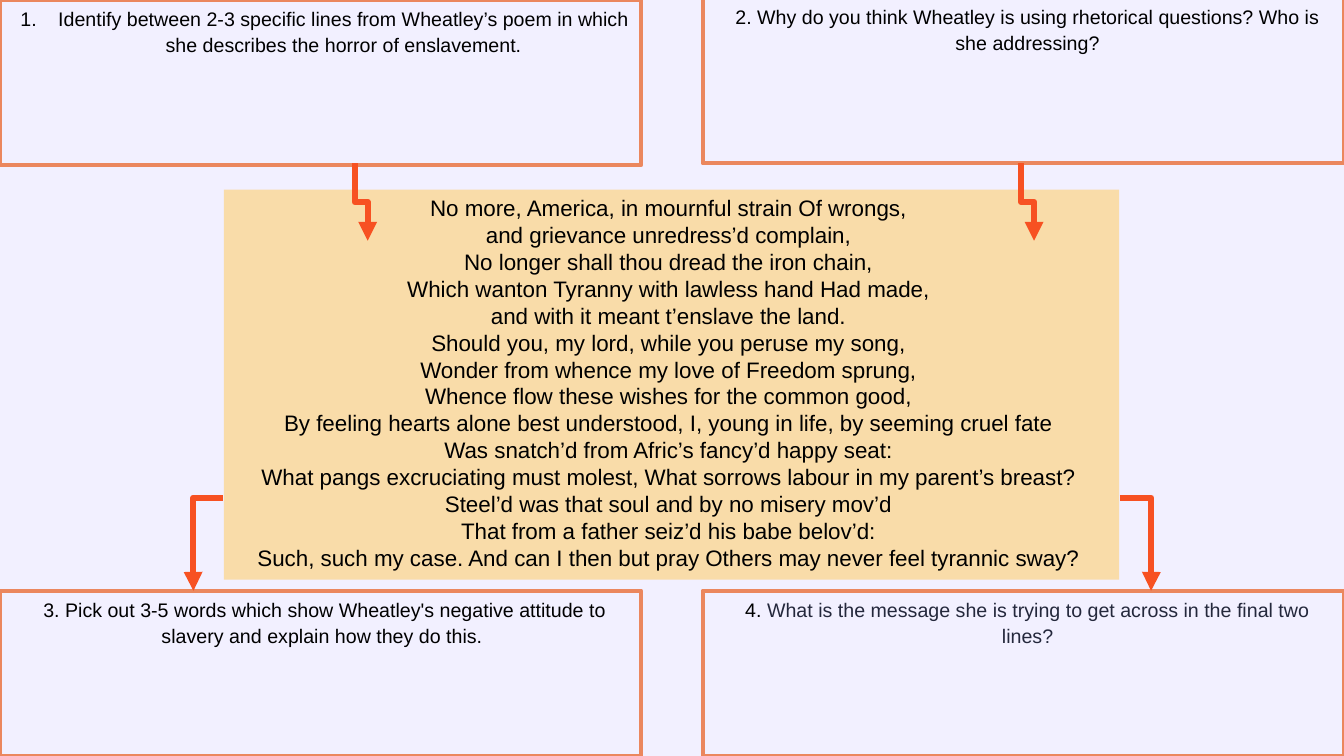
from dataclasses import dataclass

from lxml.etree import SubElement
from pptx import Presentation
from pptx.dml.color import RGBColor
from pptx.enum.shapes import MSO_CONNECTOR, MSO_SHAPE
from pptx.enum.text import MSO_ANCHOR, PP_ALIGN
from pptx.oxml.ns import qn
from pptx.util import Pt


@dataclass(frozen=True)
class Theme:
    page: str = "F2F0FF"
    poem: str = "F9DCA9"
    border: str = "EB875E"
    arrow: str = "F75122"
    text: str = "000000"
    muted_text: str = "24283C"
    font: str = "Arial"
    poem_size: float = 16
    question_size: float = 14
    border_width: float = 3
    arrow_width: float = 4.5


POEM = [
    "No more, America, in mournful strain Of wrongs, ",
    "and grievance unredress’d complain, ",
    "No longer shall thou dread the iron chain, ",
    "Which wanton Tyranny with lawless hand Had made, ",
    "and with it meant t’enslave the land. ",
    "Should you, my lord, while you peruse my song, ",
    "Wonder from whence my love of Freedom sprung, ",
    "Whence flow these wishes for the common good, ",
    "By feeling hearts alone best understood, I, young in life, by seeming cruel fate ",
    "Was snatch’d from Afric’s fancy’d happy seat: ",
    "What pangs excruciating must molest, What sorrows labour in my parent’s breast? ",
    "Steel’d was that soul and by no misery mov’d ",
    "That from a father seiz’d his babe belov’d: ",
    "Such, such my case. And can I then but pray Others may never feel tyrannic sway? ",
]

PAGE_WIDTH, PAGE_HEIGHT = 960, 540
QUESTION_WIDTH, QUESTION_HEIGHT = 458, 118
RIGHT = PAGE_WIDTH - QUESTION_WIDTH
BOTTOM = PAGE_HEIGHT - QUESTION_HEIGHT
POEM_LEFT, POEM_TOP, POEM_WIDTH, POEM_HEIGHT = 160, 135.4, 639.4, 278.6


class Worksheet:
    def __init__(self, page, theme):
        self.page = page
        self.theme = theme
        fill = page.background.fill
        fill.solid()
        fill.fore_color.rgb = RGBColor.from_string(theme.page)

    def box(self, left, top, width, height, color, border=None):
        box = self.page.shapes.add_shape(
            MSO_SHAPE.RECTANGLE, Pt(left), Pt(top), Pt(width), Pt(height))
        box.shadow.inherit = False
        box.fill.solid()
        box.fill.fore_color.rgb = RGBColor.from_string(color)
        if border:
            box.line.color.rgb = RGBColor.from_string(border)
            box.line.width = Pt(self.theme.border_width)
        else:
            box.line.fill.background()
        box.text_frame.word_wrap = True
        box.text_frame.vertical_anchor = MSO_ANCHOR.TOP
        return box

    def style(self, para, size, color):
        para.alignment = PP_ALIGN.CENTER
        for span in para.runs:
            span.font.name = self.theme.font
            span.font.size = Pt(size)
            span.font.color.rgb = RGBColor.from_string(color)

    def poem(self, lines):
        box = self.box(POEM_LEFT, POEM_TOP, POEM_WIDTH, POEM_HEIGHT, self.theme.poem)
        box.text_frame.text = "\n".join(lines)
        for para in box.text_frame.paragraphs:
            self.style(para, self.theme.poem_size, self.theme.text)

    def question(self, left, top, text, muted="", numbered=False):
        """Add a bordered box; muted text follows the main text in a softer colour."""
        theme = self.theme
        box = self.box(left, top, QUESTION_WIDTH, QUESTION_HEIGHT, theme.page, theme.border)
        para = box.text_frame.paragraphs[0]
        para.text = text
        para.line_spacing = 1.1
        properties = para._p.get_or_add_pPr()
        properties.set("marL", str(Pt(33 if numbered else 6)))
        properties.set("indent", str(Pt(-27 if numbered else 0)))
        if numbered:
            bullet_color = SubElement(properties, qn("a:buClr"))
            SubElement(bullet_color, qn("a:srgbClr"), val=theme.text)
            SubElement(properties, qn("a:buFont"), typeface=theme.font)
            SubElement(properties, qn("a:buAutoNum"), type="arabicPeriod")
        if muted:
            para.add_run().text = muted
        self.style(para, theme.question_size, theme.text)
        if muted:
            para.runs[-1].font.color.rgb = RGBColor.from_string(theme.muted_text)

    def elbow(self, begin_x, begin_y, end_x, end_y, bend):
        """Add an elbow arrow that leaves sideways and turns at the bend fraction."""
        arrow = self.page.shapes.add_connector(
            MSO_CONNECTOR.ELBOW, Pt(begin_x), Pt(begin_y), Pt(end_x), Pt(end_y))
        arrow.line.color.rgb = RGBColor.from_string(self.theme.arrow)
        arrow.line.width = Pt(self.theme.arrow_width)
        SubElement(arrow.line._get_or_add_ln(), qn("a:tailEnd"), type="triangle")
        properties = arrow._element.spPr
        SubElement(properties, qn("a:effectLst"))
        guides = properties.find(qn("a:prstGeom")).get_or_add_avLst()
        SubElement(guides, qn("a:gd"), name="adj1", fmla=f"val {round(bend * 100000)}")
        return arrow

    def down_elbow(self, begin_x, begin_y, width, height):
        """Add an elbow arrow that leaves downwards: a sideways one, turned and flipped."""
        middle_x, middle_y = begin_x + width / 2, begin_y + height / 2
        arrow = self.elbow(middle_x + height / 2, middle_y - width / 2,
                           middle_x - height / 2, middle_y + width / 2, 0.5)
        arrow._element.spPr.find(qn("a:xfrm")).set("rot", str(270 * 60000))


def main():
    deck = Presentation()
    deck.slide_width, deck.slide_height = Pt(PAGE_WIDTH), Pt(PAGE_HEIGHT)
    sheet = Worksheet(deck.slides.add_slide(deck.slide_layouts[6]), Theme())

    sheet.poem(POEM)
    sheet.question(0, 0, "Identify between 2-3 specific lines from Wheatley’s poem in which "
                   "she describes the horror of enslavement.", numbered=True)
    sheet.question(RIGHT, -1.4, "2. Why do you think Wheatley is using rhetorical questions? "
                   "Who is she addressing?")
    sheet.question(0, BOTTOM, "3. Pick out 3-5 words which show Wheatley's negative attitude to "
                   "slavery and explain how they do this. ")
    sheet.question(RIGHT, BOTTOM, "4. ", muted="What is the message she is trying to get across "
                   "in the final two lines?")

    for begin_x in (253.4, 729.4):
        sheet.down_elbow(begin_x, 116.6, 9.2, 55.4)
    for begin_x, end_x in ((159.2, 138.2), (800, 822.2)):
        sheet.elbow(begin_x, 355.7, end_x, BOTTOM, 1.01)

    deck.save("out.pptx")


if __name__ == "__main__":
    main()
